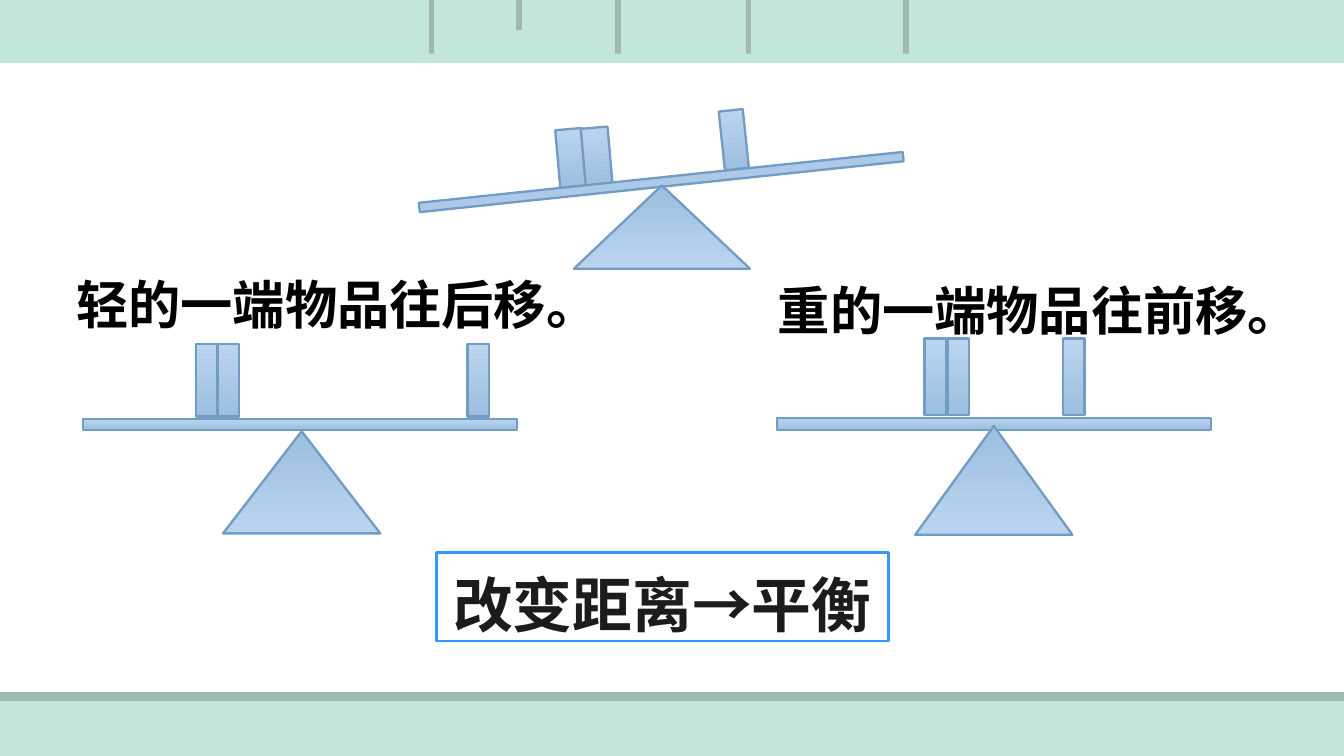
from dataclasses import dataclass

import pptx
import pptx.dml.color
import pptx.enum.shapes
import pptx.enum.text
import pptx.oxml.ns
import pptx.util
from lxml import etree

Inches = pptx.util.Inches
Pt = pptx.util.Pt
Shape = pptx.enum.shapes.MSO_SHAPE
Align = pptx.enum.text.PP_ALIGN
Anchor = pptx.enum.text.MSO_ANCHOR

FONT = "Noto Sans CJK SC"
WIDTH = 10
HEIGHT = WIDTH * 9 / 16
MINT, SAGE, WHITE = "C2E6D8", "9FB9AE", "FFFFFF"
LIGHT_BLUE, MID_BLUE, EDGE_BLUE = "BBD5F0", "9CBEE0", "739CC3"


@dataclass
class Part:
    left: float
    top: float
    width: float
    height: float
    rotation: float = 0


@dataclass
class Seesaw:
    weights: list[Part]
    plank: Part
    pivot: Part


@dataclass
class Tick:
    x: float
    bottom: float


@dataclass
class Band:
    area: Part
    color: str


@dataclass
class Caption:
    area: Part
    text: str


def color(code: str) -> pptx.dml.color.RGBColor:
    return pptx.dml.color.RGBColor.from_string(code)


def add_part(shapes, part: Part, kind=Shape.RECTANGLE):
    box = shapes.add_shape(kind, Inches(part.left), Inches(part.top),
                           Inches(part.width), Inches(part.height))
    box.rotation = part.rotation
    box.shadow.inherit = False
    return box


def set_outline(box, code: str, width: float) -> None:
    box.line.color.rgb = color(code)
    box.line.width = Pt(width)


def add_band(page, band: Band) -> None:
    box = add_part(page.shapes, band.area)
    box.fill.solid()
    box.fill.fore_color.rgb = color(band.color)
    box.line.fill.background()


def add_tick(page, tick: Tick) -> None:
    line = page.shapes.add_connector(
        pptx.enum.shapes.MSO_CONNECTOR.STRAIGHT,
        Inches(tick.x), Inches(0), Inches(tick.x), Inches(tick.bottom))
    set_outline(line, SAGE, 3)
    etree.SubElement(line._element.spPr, pptx.oxml.ns.qn("a:effectLst"))


def add_blue_part(group, part: Part, kind=Shape.RECTANGLE):
    box = add_part(group.shapes, part, kind)
    box.fill.gradient()
    box.fill.gradient_angle = 270
    for stop, position, code in zip(box.fill.gradient_stops, (0, 1),
                                    (LIGHT_BLUE, MID_BLUE)):
        stop.position = position
        stop.color.rgb = color(code)
    set_outline(box, EDGE_BLUE, 1.25)
    return box


def add_seesaw(page, seesaw: Seesaw) -> None:
    group = page.shapes.add_group_shape()
    for part in [*seesaw.weights, seesaw.plank]:
        add_blue_part(group, part)
    pivot = add_blue_part(group, seesaw.pivot, Shape.FLOWCHART_MERGE)
    pivot._element.spPr.xfrm.set("flipV", "1")


def write(box, text: str, size: float, code: str):
    para = box.text_frame.paragraphs[0]
    para.text = text
    span = para.runs[0]
    span.font.size = Pt(size)
    span.font.bold = True
    span.font.name = FONT
    span.font.color.rgb = color(code)
    east_asian = etree.SubElement(span.font._element, pptx.oxml.ns.qn("a:ea"))
    east_asian.set("typeface", FONT)
    return para


def add_caption(page, caption: Caption) -> None:
    area = caption.area
    box = page.shapes.add_textbox(Inches(area.left), Inches(area.top),
                                  Inches(area.width), Inches(area.height))
    box.text_frame.word_wrap = True
    write(box, caption.text, 28, "000000")


def add_conclusion(page, caption: Caption) -> None:
    box = add_part(page.shapes, caption.area)
    box.fill.solid()
    box.fill.fore_color.rgb = color(WHITE)
    set_outline(box, "3399FF", 1.5)
    box.text_frame.vertical_anchor = Anchor.MIDDLE
    para = write(box, caption.text, 32, "1C1C1C")
    para.alignment = Align.CENTER
    para.line_spacing = 1.2


BACKDROP = Band(Part(0, 0, WIDTH, HEIGHT), MINT)
TICKS = [Tick(4.6, 0.95), Tick(3.86, 0.22), Tick(5.57, 0.8),
         Tick(3.21, 0.67), Tick(6.74, 0.7)]
BANDS = [
    Band(Part(0, 0.41, WIDTH, 4.81), WHITE),
    Band(Part(0, 0.4, WIDTH, 0.07), MINT),
    Band(Part(0, 5.15, WIDTH, 0.07), SAGE),
]
SEESAWS = [
    Seesaw([Part(x, 2.56, 0.16, 0.54) for x in (3.48, 1.62, 1.46)],
           Part(0.62, 3.12, 3.23, 0.08), Part(1.66, 3.21, 1.17, 0.76)),
    Seesaw([Part(x, 2.52, 0.16, 0.57) for x in (7.91, 7.05, 6.88)],
           Part(5.78, 3.11, 3.23, 0.09), Part(6.81, 3.17, 1.17, 0.81)),
    Seesaw([Part(5.37, 0.82, 0.18, 0.44, 354),
            Part(4.15, 0.96, 0.2, 0.43, 355),
            Part(4.34, 0.95, 0.2, 0.43, 355)],
           Part(3.11, 1.32, 3.62, 0.07, 354), Part(4.27, 1.38, 1.31, 0.62)),
]
CAPTIONS = [
    Caption(Part(0.47, 1.98, 4.28, 0.57), "轻的一端物品往后移。"),
    Caption(Part(5.69, 2.02, 4.24, 0.57), "重的一端物品往前移。"),
]
CONCLUSION = Caption(Part(3.25, 4.11, 3.36, 0.66), "改变距离→平衡")


def main() -> None:
    deck = pptx.Presentation()
    deck.slide_width = Inches(WIDTH)
    deck.slide_height = Inches(HEIGHT)
    page = deck.slides.add_slide(deck.slide_layouts[6])
    add_band(page, BACKDROP)
    for tick in TICKS:
        add_tick(page, tick)
    for band in BANDS:
        add_band(page, band)
    for seesaw in SEESAWS:
        add_seesaw(page, seesaw)
    for caption in CAPTIONS:
        add_caption(page, caption)
    add_conclusion(page, CONCLUSION)
    deck.save("out.pptx")


if __name__ == "__main__":
    main()
